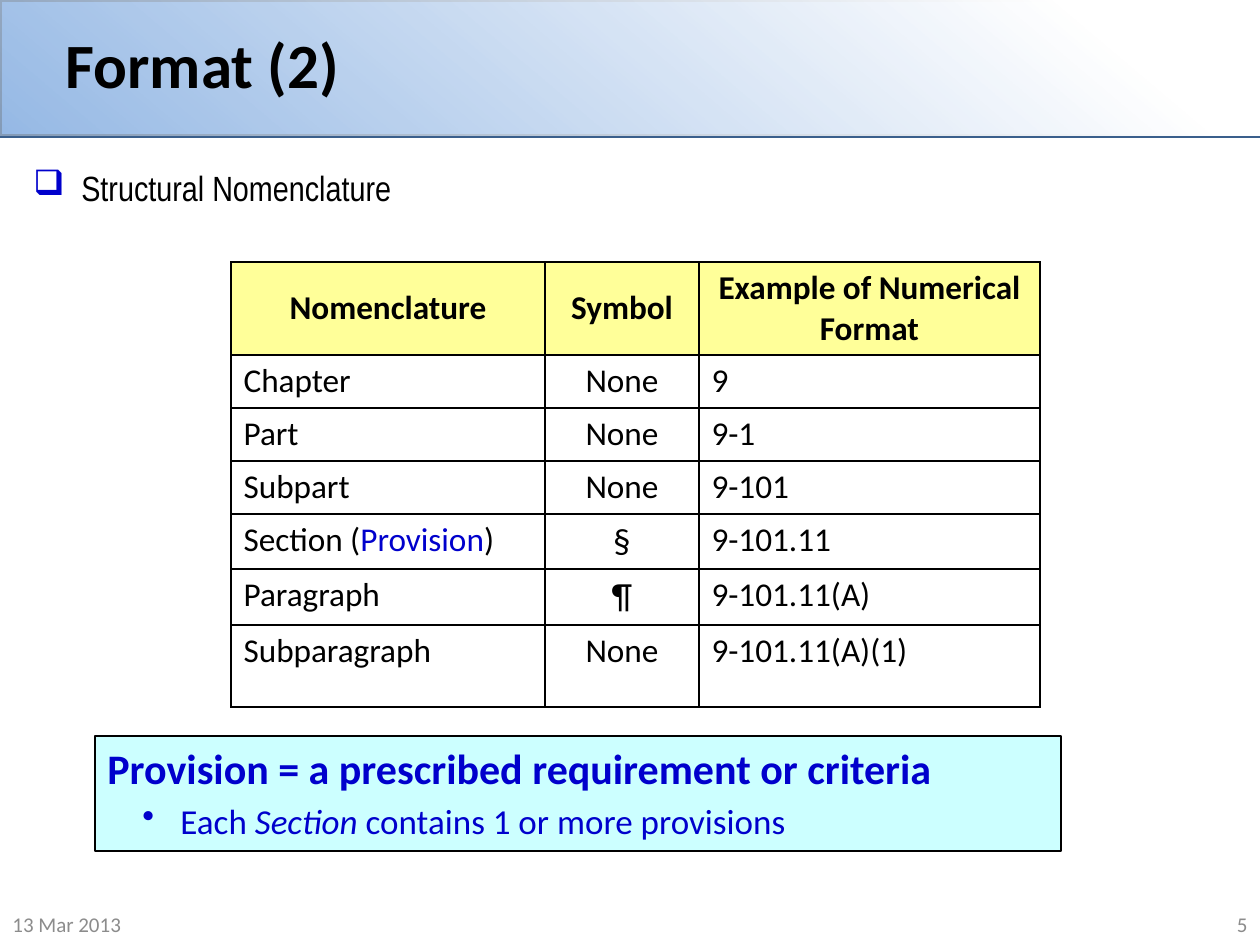
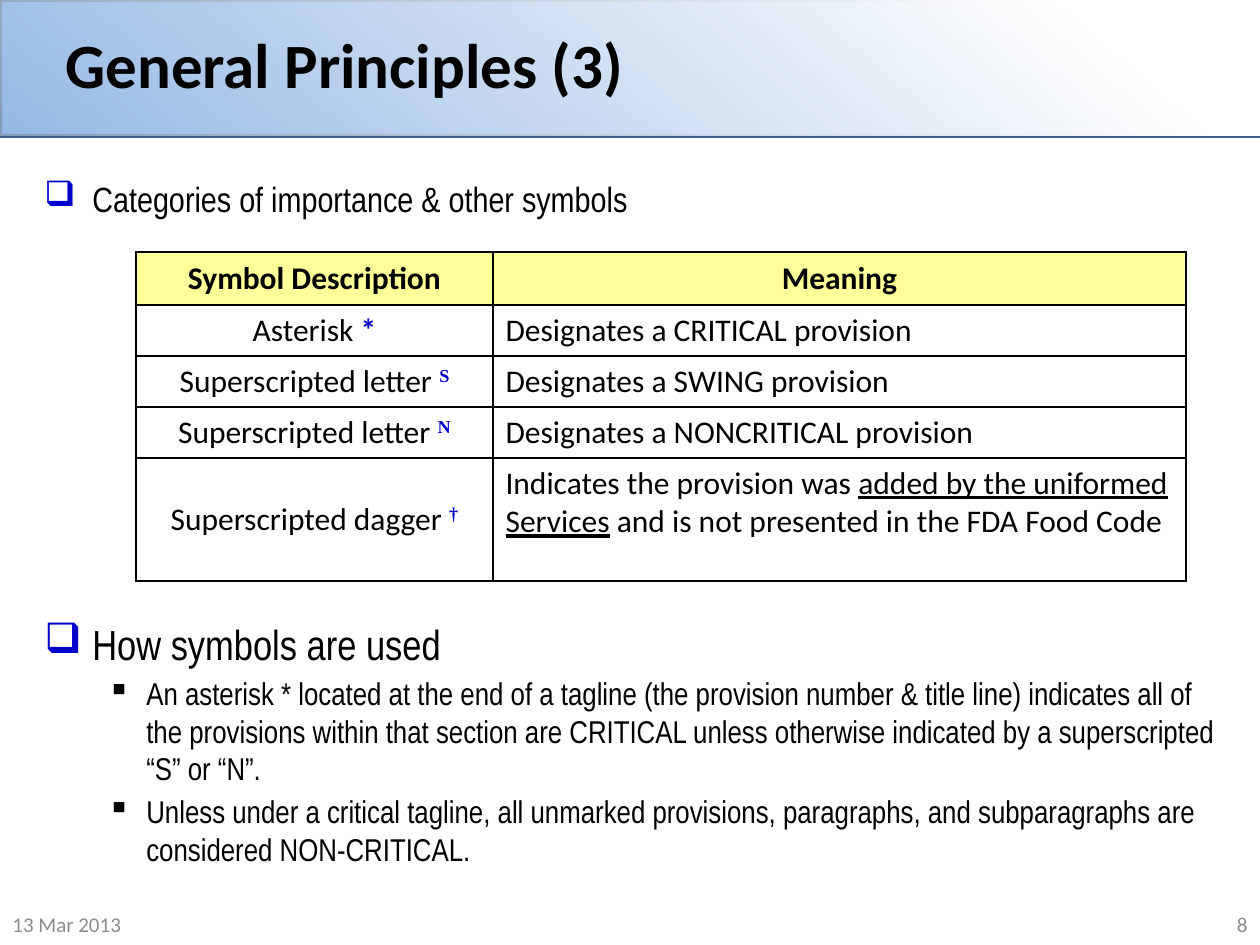
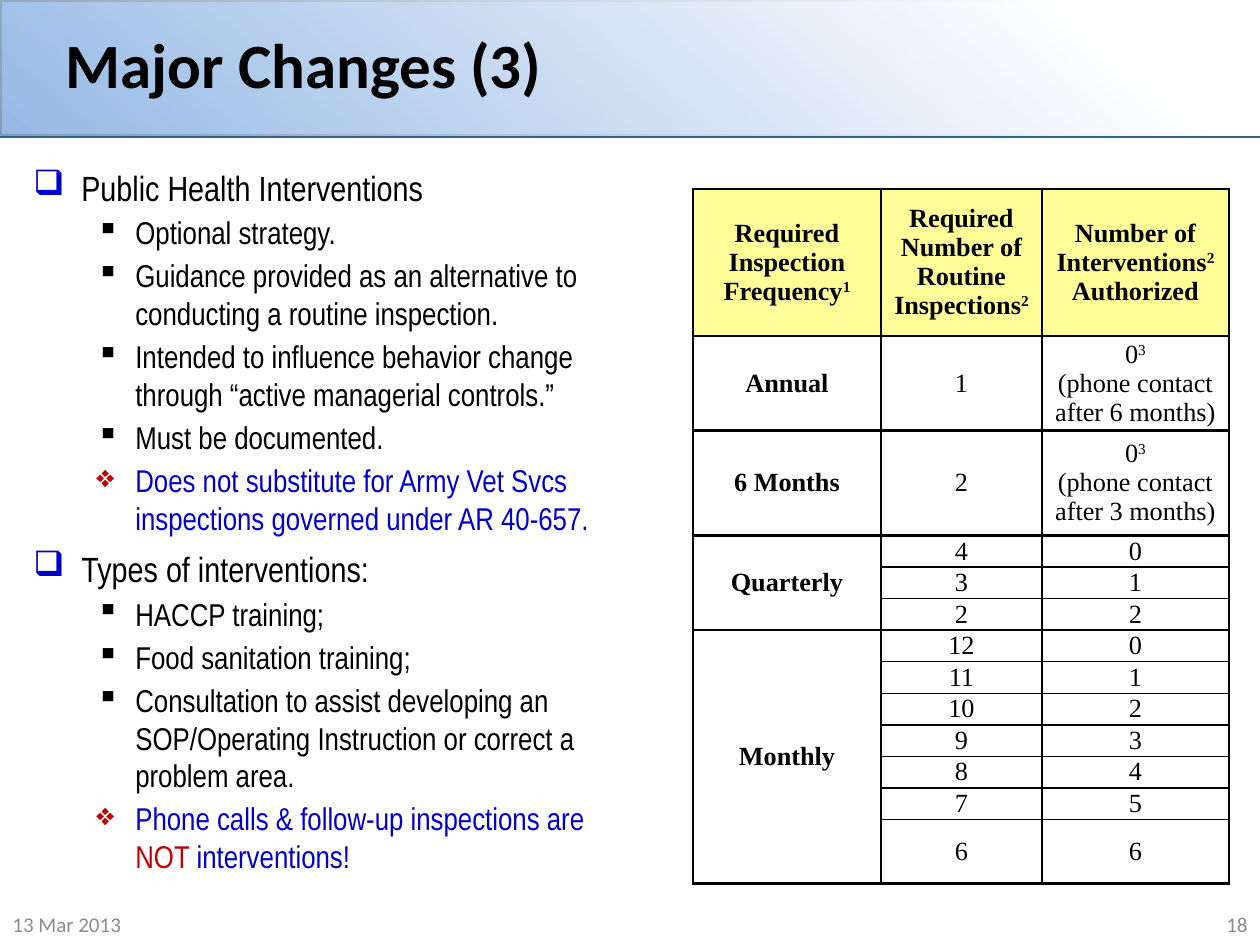
from collections import namedtuple

from lxml.etree import SubElement
from pptx import Presentation
from pptx.dml.color import RGBColor
from pptx.enum.shapes import MSO_SHAPE as Shape
from pptx.enum.text import MSO_ANCHOR as Anchor, MSO_AUTO_SIZE as AutoSize, PP_ALIGN as Align
from pptx.oxml.ns import qn
from pptx.util import Emu, Pt

SLIDE_WIDTH, SLIDE_HEIGHT = 1260, 945
BAND_HEIGHT = 136
BLACK, WHITE, BLUE, RED, GREY = "000000", "FFFFFF", "0000CC", "C00000", "8C8C8C"
BAND_BLUE, BAND_LINE = "558ED5", "3A5F8C"
HEADER_YELLOW, NOTE_CYAN = "FFFF99", "CCFFFF"
BODY_FONT, MAIN_FONT, SERIF_FONT = "Arial Narrow", "Calibri", "Times New Roman"
DATE = "13 Mar 2013"

Column = namedtuple("Column", "width align anchor bold", defaults=(Align.LEFT, Anchor.TOP, False))

OUTLINE_STYLES = {
    "topic": dict(size=20, bullet="❑", bullet_color=BLUE, margin=48, hanging=48, before=6),
    "point": dict(size=18, bullet="▪", margin=102, hanging=39, before=3, level=1),
    "warning": dict(size=18, color=BLUE, bullet="❖", bullet_color=RED,
                    margin=102, hanging=39, before=3, level=1),
}


def px(length):
    return Emu(round(length * 914400 / 126))


def rgb(color):
    return RGBColor.from_string(color)


def raised(text, **style):
    """A superscript run."""
    return text, dict(superscript=True, **style)


def add_bullet(paragraph, character, color, margin, hanging):
    properties = paragraph._p.get_or_add_pPr()
    properties.set("marL", str(px(margin)))
    properties.set("indent", str(-px(hanging)))
    color_element = SubElement(properties, qn("a:buClr"))
    SubElement(color_element, qn("a:srgbClr"), val=color)
    SubElement(properties, qn("a:buChar"), char=character)


def format_run(run, font, size, color, bold=False, italic=False, underline=False,
               superscript=False):
    run.font.name = font
    run.font.size = Pt(size)
    run.font.bold = bold
    run.font.italic = italic
    run.font.underline = underline
    run.font.color.rgb = rgb(color)
    if superscript:
        run._r.get_or_add_rPr().set("baseline", "30000")


def write(frame, *runs, font=MAIN_FONT, size=18, color=BLACK, bold=False, align=Align.LEFT,
          bullet=None, bullet_color=BLACK, margin=0, hanging=0, before=0, level=0):
    """Add a paragraph; each run is a string or a (text, style) pair."""
    first = not frame.text
    paragraph = frame.paragraphs[0] if first else frame.add_paragraph()
    if bullet:
        add_bullet(paragraph, bullet, bullet_color, margin, hanging)
    paragraph.level = level
    paragraph.alignment = align
    paragraph.space_before = Pt(0 if first else before)
    base = dict(font=font, size=size, color=color, bold=bold)
    for item in runs:
        text, style = (item, {}) if isinstance(item, str) else item
        run = paragraph.add_run()
        run.text = text
        format_run(run, **{**base, **style})


def add_text_box(slide, box, anchor=Anchor.TOP):
    frame = slide.shapes.add_textbox(*map(px, box)).text_frame
    frame.word_wrap = True
    frame.vertical_anchor = anchor
    return frame


def add_rectangle(slide, box, fill, line=None, line_width=1):
    shape = slide.shapes.add_shape(Shape.RECTANGLE, *map(px, box))
    shape.shadow.inherit = False
    shape.fill.solid()
    shape.fill.fore_color.rgb = rgb(fill)
    if line:
        shape.line.color.rgb = rgb(line)
        shape.line.width = Pt(line_width)
    else:
        shape.line.fill.background()
    return shape


def add_band(slide, layout):
    """Draw the title band and hand it to the layout, so every slide shares it."""
    box = (0, 0, SLIDE_WIDTH, BAND_HEIGHT)
    base = add_rectangle(slide, box, BAND_BLUE, BAND_LINE, 2)
    veil = add_rectangle(slide, box, WHITE)
    veil.fill.gradient()
    gradient = veil.element.spPr.find(qn("a:gradFill"))
    gradient.find(qn("a:lin")).set("ang", str(130 * 60000))
    stops = veil.fill.gradient_stops
    for stop, position in zip(stops, (0.14, 1)):
        stop.color.rgb = rgb(WHITE)
        stop.position = position
    last_color = gradient.find(qn("a:gsLst"))[-1][0]
    SubElement(last_color, qn("a:alpha"), val="37000")
    for index, shape in enumerate((base, veil)):
        layout.shapes.element.insert(2 + index, shape.element)


def add_title_slide(presentation, layout, title, number):
    """Add a slide with its title, date and page number."""
    slide = presentation.slides.add_slide(layout)
    shape = slide.shapes.title
    shape.left, shape.top, shape.width, shape.height = map(px, (53, 0, 998, 126))
    frame = shape.text_frame
    frame.auto_size = AutoSize.NONE
    frame.word_wrap = True
    frame.vertical_anchor = Anchor.MIDDLE
    write(frame, title, size=36, bold=True)
    width, height = 294, 42
    top = SLIDE_HEIGHT - height
    for left, text, align in ((0, DATE, Align.LEFT),
                              (SLIDE_WIDTH - width, str(number), Align.RIGHT)):
        footer = add_text_box(slide, (left, top, width, height), Anchor.MIDDLE)
        write(footer, text, size=12, color=GREY, align=align)
    return slide


def add_outline(slide, box, entries, **overrides):
    """Write (style name, runs...) entries; overrides replace style values of topics."""
    frame = add_text_box(slide, box)
    for kind, *runs in entries:
        style = dict(OUTLINE_STYLES[kind], font=BODY_FONT)
        if kind == "topic":
            style.update(overrides)
        write(frame, *runs, **style)


def set_borders(cell, top, bottom):
    properties = cell._tc.get_or_add_tcPr()
    for side, width in (("L", 1), ("R", 1), ("T", top), ("B", bottom)):
        line = SubElement(properties, qn(f"a:ln{side}"), w=str(Pt(width)))
        fill = SubElement(line, qn("a:solidFill"))
        SubElement(fill, qn("a:srgbClr"), val=BLACK)


def fill_cell(cell, content, header, column, font, size):
    """Write a string, or a list of paragraphs that are lists of runs."""
    if header:
        cell.fill.solid()
        cell.fill.fore_color.rgb = rgb(HEADER_YELLOW)
    else:
        cell.fill.background()
    cell.vertical_anchor = Anchor.MIDDLE if header else column.anchor
    align = Align.CENTER if header else column.align
    for runs in [[content]] if isinstance(content, str) else content:
        write(cell.text_frame, *runs, font=font, size=size, align=align,
              bold=header or column.bold)


def add_data_table(slide, left, top, columns, heights, rows, font=MAIN_FONT, size=18,
                   spans=(), heavy=(), margins=None):
    """spans: (first row, row count) in the first column; heavy: rows with a thick bottom."""
    width = sum(column.width for column in columns)
    box = map(px, (left, top, width, sum(heights)))
    table = slide.shapes.add_table(len(rows), len(columns), *box).table
    table.first_row = table.horz_banding = False
    for table_column, column in zip(table.columns, columns):
        table_column.width = px(column.width)
    for table_row, height in zip(table.rows, heights):
        table_row.height = px(height)
    for start, count in spans:
        table.cell(start, 0).merge(table.cell(start + count - 1, 0))
    for row, contents in enumerate(rows):
        for index, (column, content) in enumerate(zip(columns, contents)):
            cell = table.cell(row, index)
            last = row + cell.span_height - 1 if cell.is_merge_origin else row
            set_borders(cell, 1.5 if row - 1 in heavy else 1, 1.5 if last in heavy else 1)
            if margins:
                cell.margin_left = cell.margin_right = px(margins[0])
                cell.margin_top = cell.margin_bottom = px(margins[1])
            if content is None:
                cell.fill.background()
            else:
                fill_cell(cell, content, row == 0, column, font, size)


def add_provision_note(slide, box):
    frame = add_rectangle(slide, box, NOTE_CYAN, BLACK).text_frame
    frame.word_wrap = True
    frame.vertical_anchor = Anchor.TOP
    write(frame, "Provision = a prescribed requirement or criteria",
          size=24, color=BLUE, bold=True)
    write(frame, "Each ", ("Section", dict(italic=True)), " contains 1 or more provisions",
          size=20, color=BLUE, bullet="•", bullet_color=BLUE, margin=73, hanging=38,
          before=4, level=1)


def build_format(slide):
    add_outline(slide, (21, 160, 1207, 94), [("topic", "Structural Nomenclature")])
    columns = [Column(314), Column(154, Align.CENTER), Column(341)]
    rows = [
        ("Nomenclature", "Symbol", "Example of Numerical Format"),
        ("Chapter", "None", "9"),
        ("Part", "None", "9-1"),
        ("Subpart", "None", "9-101"),
        ([["Section (", ("Provision", dict(color=BLUE)), ")"]],
         [[("§", dict(size=20))]], "9-101.11"),
        ("Paragraph", [[("¶", dict(size=20))]], "9-101.11(A)"),
        ("Subparagraph", "None", "9-101.11(A)(1)"),
    ]
    add_data_table(slide, 231, 262, columns, [93, 53, 53, 53, 55, 56, 82], rows, size=19)
    add_provision_note(slide, (95, 736, 966, 115))


def build_principles(slide):
    add_outline(slide, (32, 171, 1197, 70),
                [("topic", "Categories of importance & other symbols")])
    columns = [Column(357, Align.CENTER, Anchor.MIDDLE), Column(693)]
    mark = dict(font=SERIF_FONT, color=BLUE, bold=True)
    rows = [
        ("Symbol Description", "Meaning"),
        ([["Asterisk ", ("*", dict(color=BLUE, bold=True))]], "Designates a CRITICAL provision"),
        ([["Superscripted letter ", raised("S", **mark)]], "Designates a SWING provision"),
        ([["Superscripted letter ", raised("N", **mark)]], "Designates a NONCRITICAL provision"),
        ([["Superscripted dagger ", raised("†", **mark)]],
         [["Indicates the provision was ",
           ("added by the uniformed Services", dict(underline=True)),
           " and is not presented in the FDA Food Code"]]),
    ]
    add_data_table(slide, 136, 252, columns, [53, 51, 51, 51, 123], rows)
    add_outline(slide, (32, 612, 1197, 301), [
        ("topic", "How symbols are used"),
        ("point", "An asterisk * located at the end of a tagline (the provision number & title "
                  "line) indicates all of the provisions within that section are CRITICAL unless "
                  "otherwise indicated by a superscripted “S” or “N”."),
        ("point", "Unless under a critical tagline, all unmarked provisions, paragraphs, and "
                  "subparagraphs are considered NON-CRITICAL."),
    ], size=24)


def build_changes(slide):
    add_outline(slide, (21, 160, 630, 743), [
        ("topic", "Public Health Interventions"),
        ("point", "Optional strategy."),
        ("point", "Guidance provided as an alternative to conducting a routine inspection."),
        ("point", "Intended to influence behavior change through “active managerial controls.”"),
        ("point", "Must be documented."),
        ("warning", "Does not substitute for Army Vet Svcs inspections governed under AR 40-657."),
        ("topic", "Types of interventions:"),
        ("point", "HACCP training;"),
        ("point", "Food sanitation training;"),
        ("point", "Consultation to assist developing an SOP/Operating Instruction or correct a "
                  "problem area."),
        ("warning", "Phone calls & follow-up inspections are ", ("NOT ", dict(color=RED)),
         "interventions!"),
    ])
    columns = [Column(188, Align.CENTER, Anchor.MIDDLE, True),
               Column(161, Align.CENTER, Anchor.MIDDLE),
               Column(187, Align.CENTER, Anchor.MIDDLE)]
    rows = [([["Required Inspection Frequency", raised("1")]],
             [["Required Number of Routine Inspections", raised("2")]],
             [["Number of Interventions", raised("2"), " Authorized"]])]
    for name, inspections, months in (("Annual", "1", 6), ("6 Months", "2", 3)):
        rows.append((name, inspections,
                     [["0", raised("3")], [f"(phone contact after {months} months)"]]))
    spans = []
    for name, most, count in (("Quarterly", 4, 3), ("Monthly", 12, 7)):
        spans.append((len(rows), count))
        rows += [(None if step else name, str(most - step), str(step)) for step in range(count)]
    heavy = {0, 1, 2} | {start + count - 1 for start, count in spans}
    add_data_table(slide, 693, 189, columns, [147, 87, 105] + [31] * 9 + [64], rows,
                   font=SERIF_FONT, size=15, spans=spans, heavy=heavy, margins=(9, 0))


def main():
    presentation = Presentation()
    presentation.slide_width, presentation.slide_height = px(SLIDE_WIDTH), px(SLIDE_HEIGHT)
    layout = presentation.slide_layouts.get_by_name("Title Only")
    pages = [("Format (2)", 5, build_format),
             ("General Principles (3)", 8, build_principles),
             ("Major Changes (3)", 18, build_changes)]
    for title, number, build in pages:
        build(add_title_slide(presentation, layout, title, number))
    add_band(presentation.slides[0], layout)
    presentation.save("out.pptx")


if __name__ == "__main__":
    main()
